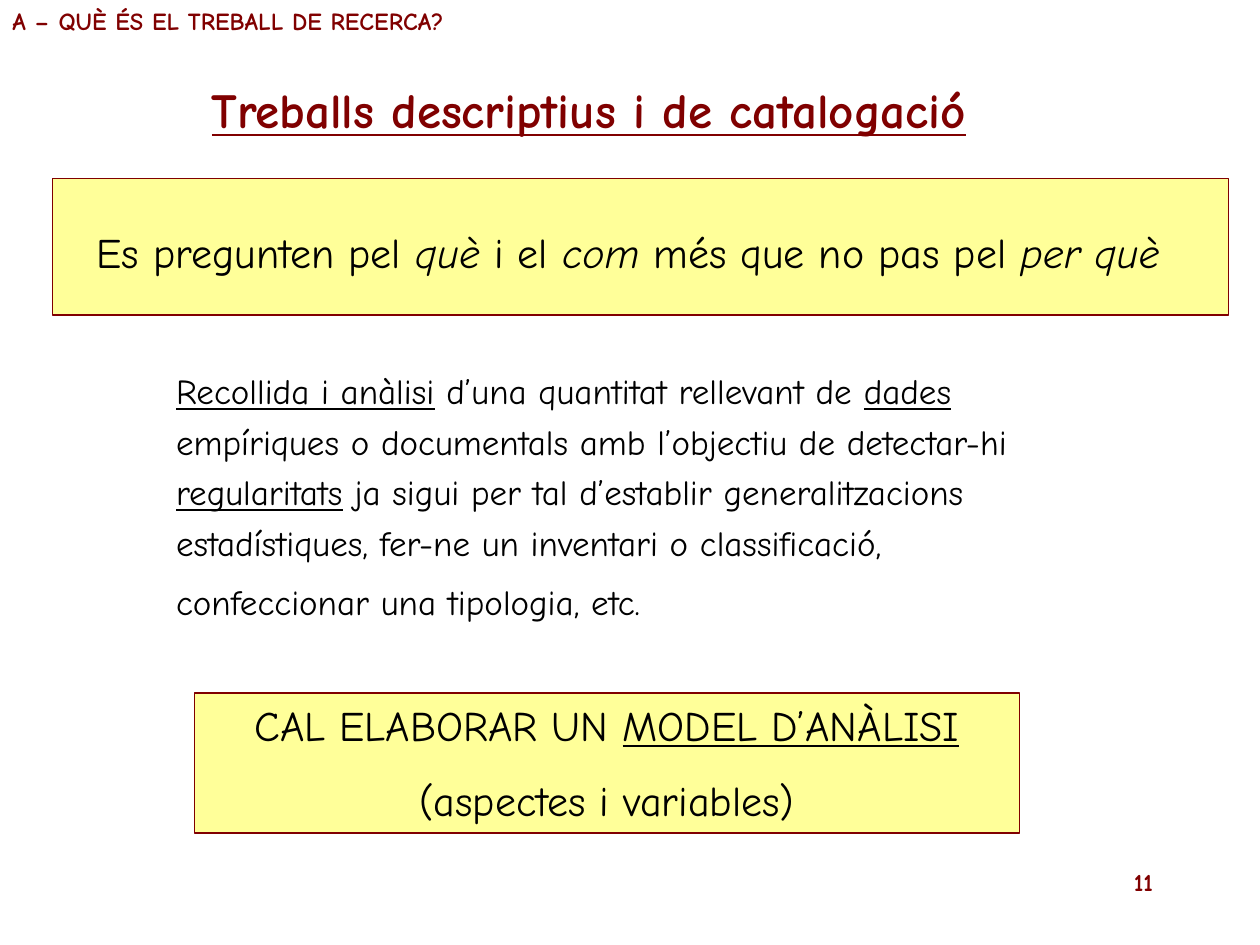
"""Build a slide on descriptive and cataloguing research projects."""
from dataclasses import dataclass

from pptx import Presentation
from pptx.dml.color import RGBColor
from pptx.enum.shapes import MSO_SHAPE
from pptx.enum.text import MSO_ANCHOR, MSO_AUTO_SIZE, PP_ALIGN
from pptx.util import Pt

RECTANGLE = MSO_SHAPE.RECTANGLE
TOP = MSO_ANCHOR.TOP
GROW, FIXED = MSO_AUTO_SIZE.SHAPE_TO_FIT_TEXT, MSO_AUTO_SIZE.NONE
LEFT, CENTER, RIGHT = PP_ALIGN.LEFT, PP_ALIGN.CENTER, PP_ALIGN.RIGHT


@dataclass(frozen=True)
class Theme:
    font: str = "Comic Neue"
    maroon: RGBColor = RGBColor(0x80, 0x00, 0x00)
    black: RGBColor = RGBColor(0x00, 0x00, 0x00)
    yellow: RGBColor = RGBColor(0xFF, 0xFF, 0x99)
    title: int = 28
    statement: int = 24
    body: int = 20
    label: int = 14


THEME = Theme()


def write(box, lines, size, color=THEME.black, align=LEFT, spacing=(None,),
          last_gap=0, wrap=False, auto_size=GROW):
    """Fill a box with lines of (text, style) spans; style holds b, i or u."""
    frame = box.text_frame
    frame.word_wrap = wrap
    frame.auto_size = auto_size
    frame.vertical_anchor = TOP
    for index, line in enumerate(lines):
        para = frame.paragraphs[0] if index == 0 else frame.add_paragraph()
        para.alignment = align
        para.line_spacing = spacing[index % len(spacing)]
        if last_gap and index == len(lines) - 1:
            para.space_before = Pt(last_gap)
        for text, style in line:
            span = para.add_run()
            span.text = text
            font = span.font
            font.name = THEME.font
            font.size = Pt(size)
            font.color.rgb = color
            font.bold = "b" in style
            font.italic = "i" in style
            font.underline = "u" in style


deck = Presentation()
deck.slide_width, deck.slide_height = Pt(720), Pt(540)
page = deck.slides.add_slide(deck.slide_layouts[6])
shapes = page.shapes

number = shapes.add_textbox(Pt(516), Pt(492), Pt(150), Pt(36))
write(number, [[("11", "b")]], THEME.label, color=THEME.maroon, align=RIGHT,
      wrap=True, auto_size=FIXED)

panels = []
for left, top, width, height in ((30, 102, 672, 78), (111, 396, 471.5, 80)):
    panel = shapes.add_shape(RECTANGLE, Pt(left), Pt(top), Pt(width), Pt(height))
    panel.shadow.inherit = False
    panel.fill.solid()
    panel.fill.fore_color.rgb = THEME.yellow
    panel.line.color.rgb = THEME.maroon
    panel.line.width = Pt(0.75)
    panels.append(panel)

title = shapes.add_textbox(Pt(114), Pt(42), Pt(512), Pt(41))
write(title, [[("Treballs descriptius i de catalogació", "bu")]], THEME.title,
      color=THEME.maroon)

question = shapes.add_textbox(Pt(48), Pt(126), Pt(638.5), Pt(36))
write(question, [[("Es pregunten pel ", ""), ("què", "i"), (" i el ", ""),
                  ("com", "i"), (" més que no pas pel ", ""),
                  ("per què", "i")]], THEME.statement)

section = shapes.add_textbox(Pt(0), Pt(0), Pt(292.5), Pt(24))
write(section, [[("A – QUÈ ÉS EL TREBALL DE RECERCA?", "b")]], THEME.label,
      color=THEME.maroon)

description = shapes.add_textbox(Pt(93.5), Pt(203), Pt(530), Pt(157))
write(description, [
    [("Recollida i anàlisi", "u"), (" d’una quantitat rellevant de ", ""),
     ("dades", "u")],
    [("empíriques o documentals amb l’objectiu de detectar-hi", "")],
    [("regularitats", "u"), (" ja sigui per tal d’establir generalitzacions", "")],
    [("estadístiques, fer-ne un inventari o classificació,", "")],
    [("confeccionar una tipologia, etc.", "")],
], THEME.body, spacing=(1.2,), last_gap=5)

write(panels[1], [
    [("CAL ELABORAR UN ", ""), ("MODEL D’ANÀLISI", "u")],
    [("(aspectes i variables)", "")],
], THEME.statement, align=CENTER, spacing=(None, 1.5))

deck.save("out.pptx")
